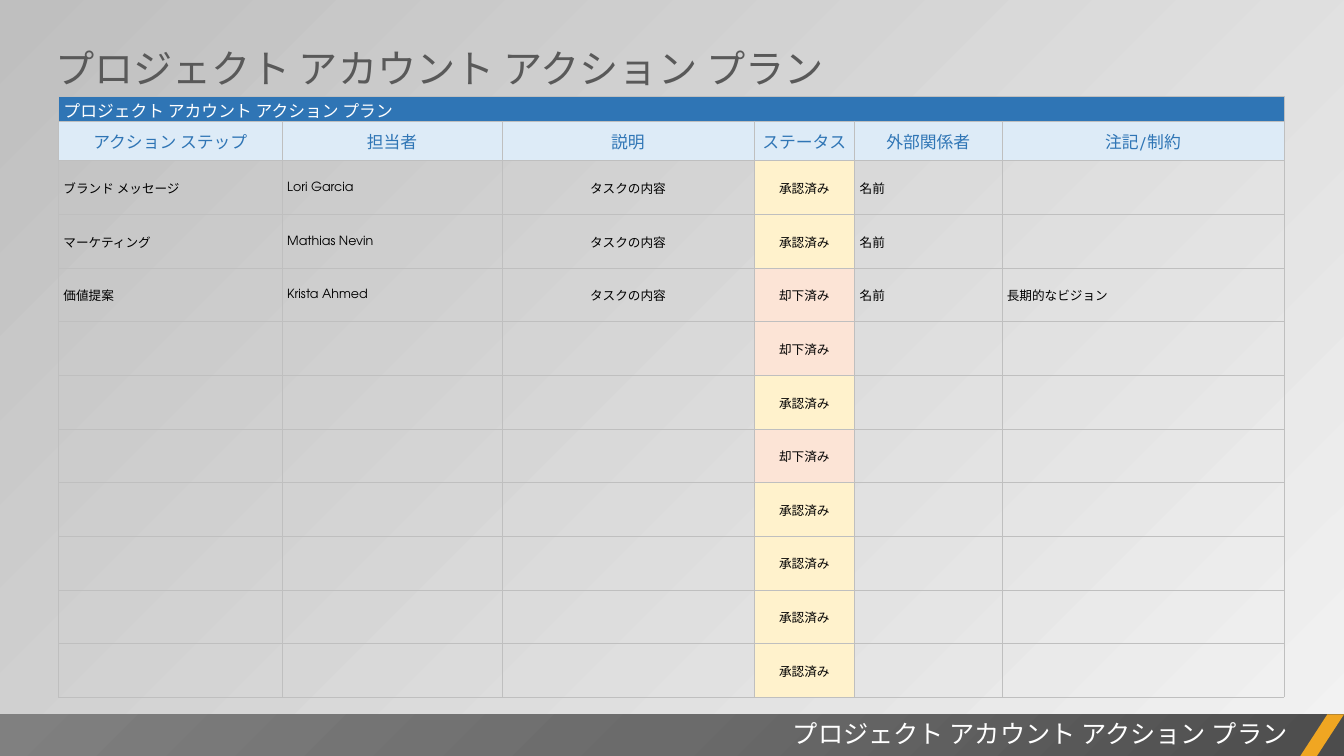
"""Build the project account action plan slide."""
from dataclasses import dataclass
from typing import Any, Optional

from lxml.etree import SubElement
from pptx import Presentation
from pptx.dml.color import RGBColor as Rgb
from pptx.enum.lang import MSO_LANGUAGE_ID as Language
from pptx.enum.shapes import MSO_SHAPE as Preset
from pptx.enum.text import MSO_ANCHOR as Anchor, PP_ALIGN as Align
from pptx.oxml.ns import qn
from pptx.util import Inches, Pt

WIDTH, HEIGHT = Inches(13.333), Inches(7.5)
FONT = "TeX Gyre Adventor"
TITLE = "プロジェクト アカウント アクション プラン"
COLORS = {
    "white": "FFFFFF", "black": "000000", "title": "595959", "accent": "F0A622",
    "blue": "2F75B5", "pale_blue": "DDEBF7", "grid": "BFBFBF",
    "approved": "FFF2CC", "rejected": "FCE4D6",
    "page_light": "F2F2F2", "page_dark": "BFBFBF",
    "band_dark": "4C4C4C", "band_middle": "6B6B6B", "band_light": "808080",
}
COLUMN_SHARES = (16.65, 16.35, 18.75, 7.5, 10.95, 21)
TITLE_ROW, HEADER_ROW, TASK_ROW = 3.2, 5.25, 7.1
HEADERS = ("アクション ステップ", "担当者", "説明", "ステータス", "外部関係者", "注記/制約")
STATUS_TEXT = {"approved": "承認済み", "rejected": "却下済み"}
CENTERED_COLUMNS = (2, 3)


@dataclass(frozen=True)
class Area:
    """Position and size in percent of the slide."""
    left: float
    top: float
    width: float
    height: float

    def lengths(self) -> tuple[int, int, int, int]:
        """Return the area as slide lengths."""
        return (across(self.left), down(self.top), across(self.width), down(self.height))


@dataclass(frozen=True)
class Style:
    """Look of one line of text."""
    size: float
    color: str
    align: Align = Align.LEFT


@dataclass(frozen=True)
class Label:
    """Text box on the slide."""
    area: Area
    style: Style


@dataclass(frozen=True)
class Block:
    """Preset shape on the slide."""
    preset: Preset
    area: Area
    color: str


@dataclass(frozen=True)
class Task:
    """One row of the plan."""
    status: str
    step: str = ""
    owner: str = ""
    detail: str = ""
    partner: str = ""
    note: str = ""

    def texts(self) -> tuple[str, ...]:
        """Return the cell texts in column order."""
        return (self.step, self.owner, self.detail, STATUS_TEXT[self.status],
                self.partner, self.note)


@dataclass(frozen=True)
class Stop:
    """Gradient stop in percent."""
    position: int
    color: str
    alpha: int = 100


TASKS = (
    Task("approved", "ブランド メッセージ", "Lori Garcia", "タスクの内容", "名前"),
    Task("approved", "マーケティング", "Mathias Nevin", "タスクの内容", "名前"),
    Task("rejected", "価値提案", "Krista Ahmed", "タスクの内容", "名前", "長期的なビジョン"),
    *(Task(status) for status in ("rejected", "approved", "rejected") + ("approved",) * 4),
)
BAND = Block(Preset.RECTANGLE, Area(0, 94.5, 100, 5.5), "band_dark")
SLASH = Block(Preset.PARALLELOGRAM, Area(96.75, 94.5, 3.25, 5.5), "accent")
LABELS = (
    Label(Area(39.38, 94.4, 57.15, 5.33), Style(18, "white", Align.RIGHT)),
    Label(Area(3.38, 5.2, 58.88, 7.6), Style(28, "title")),
)
PLAN_AREA = Area(4.35, 12.8, sum(COLUMN_SHARES),
                 TITLE_ROW + HEADER_ROW + TASK_ROW * len(TASKS))


def across(share: float) -> int:
    """Turn a percentage of the slide width into a length."""
    return round(WIDTH * share / 100)


def down(share: float) -> int:
    """Turn a percentage of the slide height into a length."""
    return round(HEIGHT * share / 100)


def set_all(target: Any, values: dict[str, Any]) -> None:
    """Set every named attribute on the target."""
    for name, value in values.items():
        setattr(target, name, value)


def add_color(parent: Any, color: str, alpha: int = 100) -> None:
    """Append a colour element to the parent."""
    tint = SubElement(parent, qn("a:srgbClr"), val=COLORS[color])
    if alpha < 100:
        SubElement(tint, qn("a:alpha"), val=str(alpha * 1000))


def paint_gradient(owner: Any, stops: tuple[Stop, ...], angle: Optional[int] = None) -> None:
    """Fill with a linear gradient, or a circular one from the lower right corner."""
    gradient = next(owner.element.iter(qn("a:gradFill")))
    for child in list(gradient):
        gradient.remove(child)
    stop_list = SubElement(gradient, qn("a:gsLst"))
    for stop in stops:
        mark = SubElement(stop_list, qn("a:gs"), pos=str(stop.position * 1000))
        add_color(mark, stop.color, stop.alpha)
    if angle is not None:
        SubElement(gradient, qn("a:lin"), ang=str(angle * 60000), scaled="0")
    else:
        shade = SubElement(gradient, qn("a:path"), {"path": "circle"})
        SubElement(shade, qn("a:fillToRect"), l="100000", t="100000")


def write(frame: Any, text: str, style: Style) -> None:
    """Write one styled line into a text frame."""
    para = frame.paragraphs[0]
    para.alignment = style.align
    span = para.add_run()
    span.text = text
    set_all(span.font, {"name": FONT, "size": Pt(style.size),
                        "language_id": Language.JAPANESE})
    span.font.color.rgb = Rgb.from_string(COLORS[style.color])


def add_block(page: Any, block: Block) -> Any:
    """Add a plain filled shape."""
    shape = page.shapes.add_shape(block.preset, *block.area.lengths())
    shape.shadow.inherit = False
    shape.line.fill.background()
    shape.fill.solid()
    shape.fill.fore_color.rgb = Rgb.from_string(COLORS[block.color])
    return shape


def add_label(page: Any, label: Label) -> None:
    """Add a text box holding the slide title."""
    box = page.shapes.add_textbox(*label.area.lengths())
    set_all(box.text_frame, {"word_wrap": True, "vertical_anchor": Anchor.MIDDLE})
    write(box.text_frame, TITLE, label.style)


def fill_cell(cell: Any, text: str, style: Style, color: Optional[str] = None) -> None:
    """Set the text, fill and borders of a table cell."""
    margin = 0.05 if style.align == Align.LEFT else 0.01
    set_all(cell, {"margin_left": Inches(margin), "margin_top": Inches(0.01),
                   "margin_right": Inches(0.01), "margin_bottom": 0,
                   "vertical_anchor": Anchor.MIDDLE})
    properties = cell._tc.get_or_add_tcPr()
    for side in ("lnL", "lnR", "lnT", "lnB"):
        border = SubElement(properties, qn(f"a:{side}"), w=str(Pt(0.5)))
        add_color(SubElement(border, qn("a:solidFill")), "grid")
    if color:
        cell.fill.solid()
        cell.fill.fore_color.rgb = Rgb.from_string(COLORS[color])
    else:
        cell.fill.background()
    if text:
        write(cell.text_frame, text, style)


def add_plan(page: Any) -> None:
    """Add the action plan table."""
    table = page.shapes.add_table(len(TASKS) + 2, len(HEADERS),
                                  *PLAN_AREA.lengths()).table
    set_all(table, {"first_row": False, "horz_banding": False})
    for column, share in zip(table.columns, COLUMN_SHARES):
        column.width = across(share)
    for row, share in zip(table.rows, (TITLE_ROW, HEADER_ROW) + (TASK_ROW,) * len(TASKS)):
        row.height = down(share)
    table.cell(0, 0).merge(table.cell(0, len(HEADERS) - 1))
    for column, header in enumerate(HEADERS):
        fill_cell(table.cell(0, column), "" if column else TITLE, Style(12, "white"), "blue")
        fill_cell(table.cell(1, column), header, Style(12, "blue", Align.CENTER), "pale_blue")
    for row, task in enumerate(TASKS, 2):
        for column, text in enumerate(task.texts()):
            align = Align.CENTER if column in CENTERED_COLUMNS else Align.LEFT
            color = task.status if HEADERS[column] == "ステータス" else None
            fill_cell(table.cell(row, column), text, Style(9, "black", align), color)


def main() -> None:
    """Build and save the deck."""
    deck = Presentation()
    set_all(deck, {"slide_width": WIDTH, "slide_height": HEIGHT})
    page = deck.slides.add_slide(deck.slide_layouts[6])
    page.background.fill.gradient()
    paint_gradient(page, (Stop(0, "page_light", 40), Stop(100, "page_dark")), 225)
    band = add_block(page, BAND)
    band.fill.gradient()
    paint_gradient(band, (Stop(0, "band_dark"), Stop(50, "band_middle"),
                          Stop(100, "band_light")))
    add_block(page, SLASH).adjustments[0] = 0.65
    for label in LABELS:
        add_label(page, label)
    add_plan(page)
    deck.save("out.pptx")


if __name__ == "__main__":
    main()
